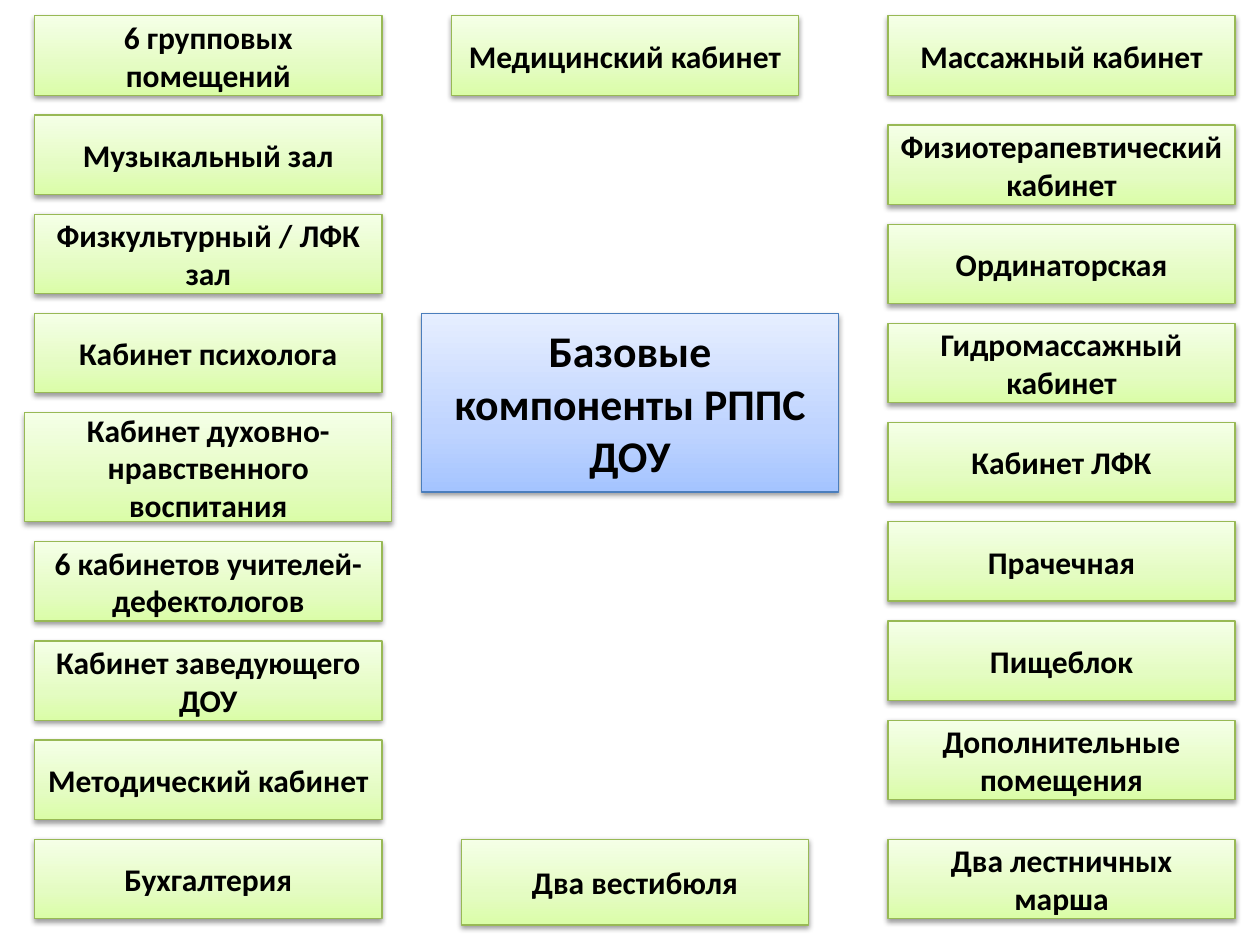
"""Build the slide listing the rooms that form the basis of a kindergarten environment."""

from dataclasses import dataclass
from typing import Iterator, Sequence

from lxml.etree import SubElement
from pptx import Presentation
from pptx.dml.color import RGBColor
from pptx.enum.shapes import MSO_SHAPE
from pptx.enum.text import MSO_ANCHOR, MSO_AUTO_SIZE, PP_ALIGN
from pptx.oxml.ns import qn
from pptx.shapes.autoshape import Shape
from pptx.slide import Slide
from pptx.util import Cm, Pt


@dataclass(frozen=True)
class Style:
    """Colours and type size of one kind of box."""

    stops: tuple[str, str, str]
    outline: str
    size: int


@dataclass(frozen=True)
class Theme:
    """Looks shared by the whole slide."""

    font: str = "Calibri"
    ink: str = "000000"
    shadow_opacity: int = 38
    stop_positions: tuple[int, int, int] = (0, 35, 100)
    topic: Style = Style(("A4C4FF", "BFD4FF", "E6EEFF"), "4B7EBC", 25)
    room: Style = Style(("DAFDA7", "E4FCC2", "F5FFE7"), "98B955", 18)


@dataclass(frozen=True)
class Box:
    """A caption with its place in centimetres."""

    caption: str
    left: float
    top: float
    width: float = 7.0
    height: float = 1.6


THEME = Theme()
GAP = 0.4
TOP_ROW, BOTTOM_ROW = 0.32, 16.92
LEFT_COLUMN, RIGHT_COLUMN = 0.7, 17.9
SPIRITUAL_ROOM = "Кабинет духовно-нравственного воспитания"
LEFT_ROOMS = (
    "6 групповых помещений",
    "Музыкальный зал",
    "Физкультурный / ЛФК зал",
    "Кабинет психолога",
    SPIRITUAL_ROOM,
    "6 кабинетов учителей-дефектологов",
    "Кабинет заведующего ДОУ",
    "Методический кабинет",
    "Бухгалтерия",
)
RIGHT_ROOMS = (
    "Физиотерапевтический кабинет",
    "Ординаторская",
    "Гидромассажный кабинет",
    "Кабинет ЛФК",
    "Прачечная",
    "Пищеблок",
    "Дополнительные помещения",
)
TOPIC = Box("Базовые компоненты РППС ДОУ", 8.5, 6.32, 8.4, 3.6)
SEPARATE_ROOMS = (
    Box("Медицинский кабинет", 9.1, TOP_ROW),
    Box("Массажный кабинет", RIGHT_COLUMN, TOP_ROW),
    Box("Два лестничных марша", RIGHT_COLUMN, BOTTOM_ROW),
    Box("Два вестибюля", 9.3, BOTTOM_ROW, height=1.73),
)


def stack(captions: Sequence[str], left: float, top: float) -> Iterator[Box]:
    """Place captions one under another with equal gaps."""
    for caption in captions:
        if caption == SPIRITUAL_ROOM:
            box = Box(caption, left - 0.2, top, 7.4, 2.2)
        else:
            box = Box(caption, left, top)
        yield box
        top += box.height + GAP


def paint(shape: Shape, style: Style) -> None:
    """Give a shape its gradient, outline and soft shadow."""
    shape.fill.gradient()
    shape.fill.gradient_angle = 90
    properties = shape._element.spPr
    stop_list = properties.find(qn("a:gradFill")).find(qn("a:gsLst"))
    stop_list.clear()
    for position, colour in zip(THEME.stop_positions, style.stops):
        stop = SubElement(stop_list, qn("a:gs"), pos=str(position * 1000))
        SubElement(stop, qn("a:srgbClr"), val=colour)
    shape.line.color.rgb = RGBColor.from_string(style.outline)
    shape.line.width = Pt(0.75)
    shape.shadow.inherit = False
    shadow = SubElement(
        properties.find(qn("a:effectLst")),
        qn("a:outerShdw"),
        blurRad=str(Pt(3.1)),
        dist=str(Pt(1.6)),
        dir="5400000",
        rotWithShape="0",
    )
    tint = SubElement(shadow, qn("a:srgbClr"), val=THEME.ink)
    SubElement(tint, qn("a:alpha"), val=str(THEME.shadow_opacity * 1000))


def write(shape: Shape, caption: str, style: Style) -> None:
    """Put a bold centred caption into a shape."""
    frame = shape.text_frame
    frame.word_wrap = True
    frame.auto_size = MSO_AUTO_SIZE.NONE
    frame.vertical_anchor = MSO_ANCHOR.MIDDLE
    paragraph = frame.paragraphs[0]
    paragraph.alignment = PP_ALIGN.CENTER
    run = paragraph.add_run()
    run.text = caption
    run.font.name = THEME.font
    run.font.size = Pt(style.size)
    run.font.bold = True
    run.font.color.rgb = RGBColor.from_string(THEME.ink)


def draw_topic(slide: Slide, box: Box) -> None:
    """Turn the title placeholder into the central box."""
    topic = slide.shapes.title
    topic.left, topic.top = Cm(box.left), Cm(box.top)
    topic.width, topic.height = Cm(box.width), Cm(box.height)
    paint(topic, THEME.topic)
    write(topic, box.caption, THEME.topic)


def draw_room(slide: Slide, box: Box) -> None:
    """Draw one room box."""
    room = slide.shapes.add_shape(
        MSO_SHAPE.RECTANGLE, Cm(box.left), Cm(box.top), Cm(box.width), Cm(box.height)
    )
    paint(room, THEME.room)
    write(room, box.caption, THEME.room)


def main() -> None:
    """Build and save the presentation."""
    presentation = Presentation()
    presentation.slide_width, presentation.slide_height = Cm(25.4), Cm(19.05)
    slide = presentation.slides.add_slide(presentation.slide_layouts[5])
    draw_topic(slide, TOPIC)
    rooms = (
        *stack(LEFT_ROOMS, LEFT_COLUMN, TOP_ROW),
        *stack(RIGHT_ROOMS, RIGHT_COLUMN, 2.52),
        *SEPARATE_ROOMS,
    )
    for room in rooms:
        draw_room(slide, room)
    presentation.save("out.pptx")


if __name__ == "__main__":
    main()
